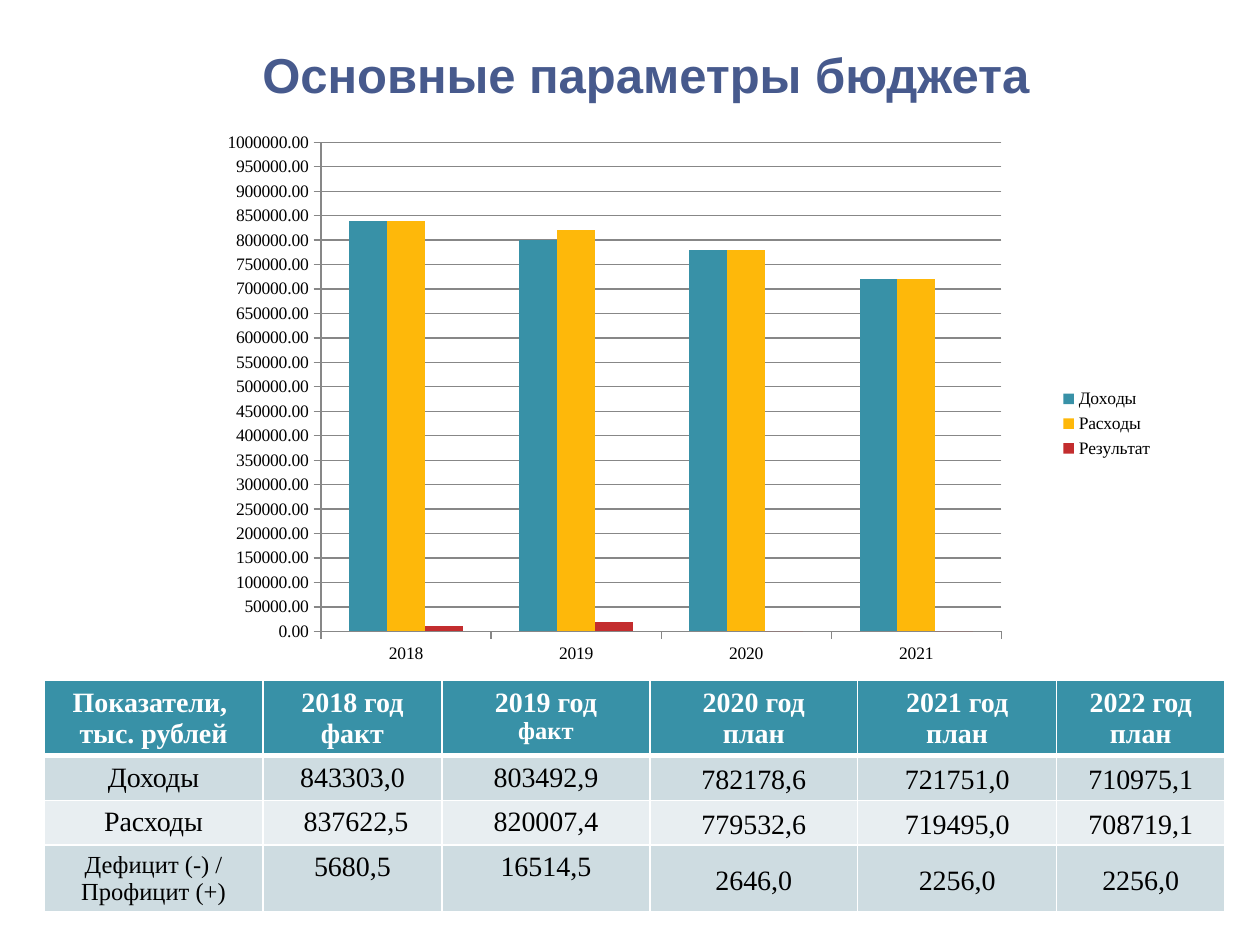
from lxml.etree import SubElement
from pptx import Presentation
from pptx.chart.data import CategoryChartData
from pptx.dml.color import RGBColor
from pptx.enum.chart import XL_CHART_TYPE, XL_LEGEND_POSITION, XL_TICK_MARK
from pptx.enum.text import MSO_ANCHOR, PP_ALIGN
from pptx.oxml import parse_xml
from pptx.oxml.ns import nsdecls, qn
from pptx.util import Cm, Pt

THEME = {
    "title": {"name": "Arial", "size": Pt(28), "bold": True, "color": "475A8D"},
    "header": {"name": "Times New Roman", "size": Pt(16), "bold": True, "color": "FFFFFF"},
    "body": {"name": "Times New Roman", "size": Pt(16), "bold": False, "color": "000000"},
    "chart": {"name": "Times New Roman", "size": Pt(10), "bold": False, "color": "000000"},
    "small": Pt(14),
    "row_fills": ["3891A7", "CEDCE1", "E8EEF1", "CEDCE1"],
    "series": ["3891A7", "FEB80A", "C32D2E"],
    "border": "FFFFFF",
    "grid": "878787",
}
TABLE_ROWS = [
    ["Показатели, \nтыс. рублей", "2018 год\nфакт", "2019 год\nфакт",
     "2020 год\nплан", "2021 год\nплан", "2022 год\nплан"],
    ["Доходы", "843303,0", "803492,9", "782178,6", "721751,0", "710975,1"],
    ["Расходы", " 837622,5", "820007,4", "779532,6", "719495,0", "708719,1"],
    ["Дефицит (-) /\nПрофицит (+)", "5680,5", "16514,5", "2646,0", "2256,0", "2256,0"],
]
SMALL_TEXT = ["Дефицит (-) /", "Профицит (+)"]
COLUMN_WIDTHS = [4.41, 3.61, 4.19, 4.19, 4.01, 3.39]
ROW_HEIGHTS = [1.46, 0.9, 0.9, 1.35]
CHART_YEARS = ["2018", "2019", "2020", "2021"]
SERIES_NAMES = ["Доходы", "Расходы", "Результат"]
TOP_CELL = {"vertical_anchor": MSO_ANCHOR.TOP, "margin_left": Cm(0.13), "margin_right": Cm(0.13),
            "margin_top": Cm(0.13), "margin_bottom": Cm(0.13)}
MIDDLE_CELL = {"vertical_anchor": MSO_ANCHOR.MIDDLE, "margin_left": Cm(0.18), "margin_right": Cm(0.18),
               "margin_top": 0, "margin_bottom": 0}


def set_format(target, values):
    for attribute, value in values.items():
        if attribute == "color":
            target.color.rgb = RGBColor.from_string(value)
        else:
            setattr(target, attribute, value)


def add_border(cell, side, position, width):
    line = parse_xml(f'<a:{side} {nsdecls("a")} w="{Pt(width)}"/>')
    fill = SubElement(line, qn("a:solidFill"))
    SubElement(fill, qn("a:srgbClr"), val=THEME["border"])
    cell._tc.get_or_add_tcPr().insert(position, line)


presentation = Presentation()
set_format(presentation, {"slide_width": Cm(25.4), "slide_height": Cm(19.05)})
slide = presentation.slides.add_slide(presentation.slide_layouts[5])

title = slide.shapes.title
set_format(title, {"left": Cm(1.69), "top": Cm(0.63), "width": Cm(22.66), "height": Cm(1.7)})
title.text_frame.text = "Основные параметры бюджета"
title.text_frame.vertical_anchor = MSO_ANCHOR.MIDDLE
title_paragraph = title.text_frame.paragraphs[0]
title_paragraph.alignment = PP_ALIGN.CENTER
set_format(title_paragraph.runs[0].font, THEME["title"])

table = slide.shapes.add_table(
    len(TABLE_ROWS), len(COLUMN_WIDTHS), Cm(0.89), Cm(13.72),
    Cm(sum(COLUMN_WIDTHS)), Cm(sum(ROW_HEIGHTS))).table
for column, width in zip(table.columns, COLUMN_WIDTHS):
    column.width = Cm(width)
for row, height in zip(table.rows, ROW_HEIGHTS):
    row.height = Cm(height)

for row_index, texts in enumerate(TABLE_ROWS):
    is_header = row_index == 0
    for column_index, text in enumerate(texts):
        cell = table.cell(row_index, column_index)
        is_plan = not is_header and column_index > 2
        cell.text = text
        set_format(cell, MIDDLE_CELL if is_plan else TOP_CELL)
        cell.fill.solid()
        cell.fill.fore_color.rgb = RGBColor.from_string(THEME["row_fills"][row_index])
        border_widths = {"lnL": 1, "lnR": 1, "lnT": 1, "lnB": 3 if is_header else 1}
        for position, (side, width) in enumerate(border_widths.items()):
            add_border(cell, side, position, width)
        for paragraph in cell.text_frame.paragraphs:
            paragraph.alignment = PP_ALIGN.CENTER
            if is_plan:
                paragraph.line_spacing = 1.15
            font = paragraph.runs[0].font
            set_format(font, THEME["header" if is_header else "body"])
            if paragraph.text in SMALL_TEXT or (text == "2019 год\nфакт" and paragraph.text == "факт"):
                font.size = THEME["small"]

chart_data = CategoryChartData(number_format="0.00")
chart_data.categories = CHART_YEARS
for name, texts in zip(SERIES_NAMES, TABLE_ROWS[1:]):
    values = [round(float(text.replace(",", ".")), -4) for text in texts[1:len(CHART_YEARS) + 1]]
    chart_data.add_series(name, values)

chart = slide.shapes.add_chart(
    XL_CHART_TYPE.COLUMN_CLUSTERED, Cm(4.3), Cm(2.52), Cm(19.21), Cm(12.04), chart_data).chart
set_format(chart, {"has_title": False, "has_legend": True})
set_format(chart.font, THEME["chart"])
set_format(chart.legend, {"position": XL_LEGEND_POSITION.RIGHT, "include_in_layout": False})

plot = chart.plots[0]
set_format(plot, {"gap_width": 150, "overlap": 0, "vary_by_categories": False})
for series, color in zip(plot.series, THEME["series"]):
    series.format.fill.solid()
    series.format.fill.fore_color.rgb = RGBColor.from_string(color)
    series.invert_if_negative = False

value_axis = chart.value_axis
set_format(value_axis, {"minimum_scale": 0, "maximum_scale": 1000000, "major_unit": 50000,
                        "has_major_gridlines": True})
set_format(value_axis.tick_labels, {"number_format": "0.00", "number_format_is_linked": False})
for axis in (value_axis, chart.category_axis):
    set_format(axis, {"major_tick_mark": XL_TICK_MARK.OUTSIDE, "minor_tick_mark": XL_TICK_MARK.NONE})
for item in (value_axis, chart.category_axis, value_axis.major_gridlines):
    set_format(item.format.line, {"width": Pt(0.75), "color": THEME["grid"]})

plot_area = chart._chartSpace.chart.plotArea
for old_layout in plot_area.findall(qn("c:layout")):
    plot_area.remove(old_layout)
layout = parse_xml(f'<c:layout {nsdecls("c")}/>')
manual_layout = SubElement(layout, qn("c:manualLayout"))
layout_values = {"layoutTarget": "inner", "xMode": "edge", "yMode": "edge",
                 "x": "0.113", "y": "0.029", "w": "0.714", "h": "0.819"}
for tag, value in layout_values.items():
    SubElement(manual_layout, qn(f"c:{tag}"), val=value)
plot_area.insert(0, layout)

no_fill = f'<c:spPr {nsdecls("c", "a")}><a:noFill/><a:ln><a:noFill/></a:ln></c:spPr>'
plot_area.append(parse_xml(no_fill))
chart._chartSpace.chart.addnext(parse_xml(no_fill))

presentation.save("out.pptx")
